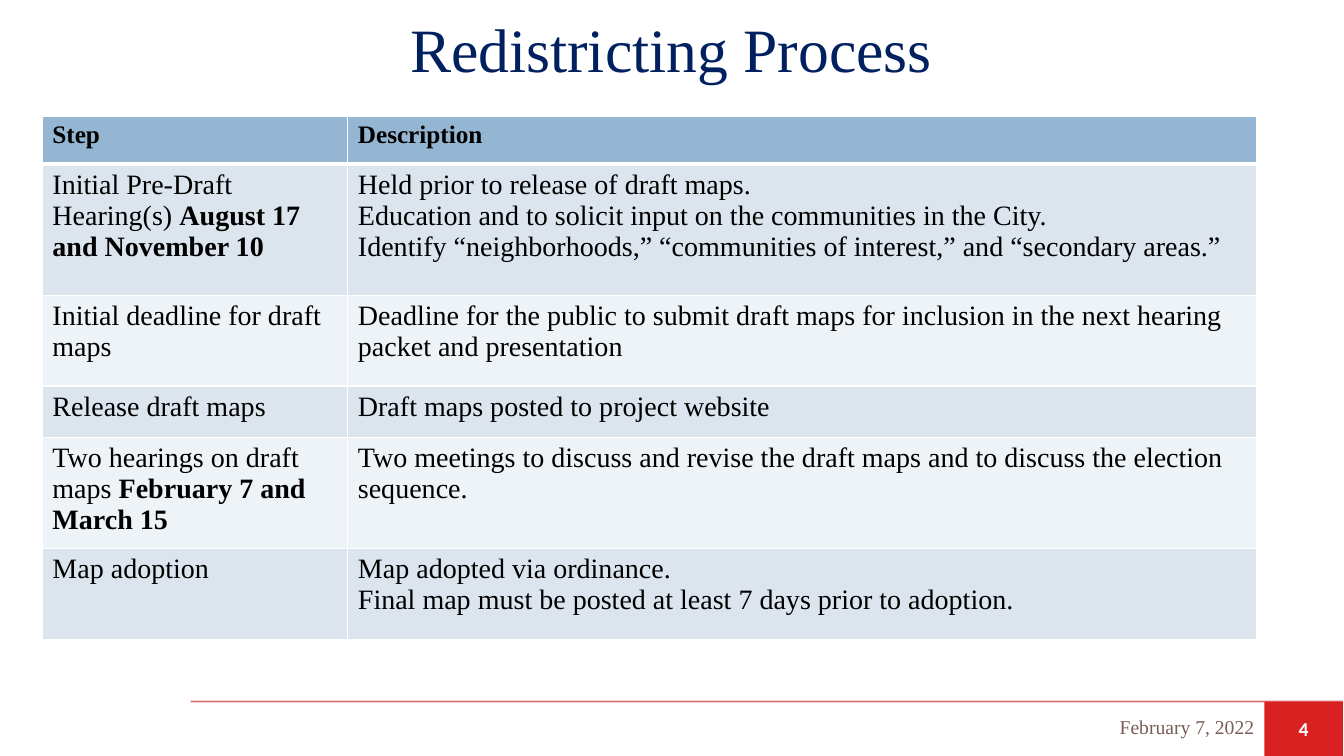
"""Build the Redistricting Process slide with its table of steps."""
from dataclasses import dataclass

import lxml.etree
import pptx
import pptx.dml.color
import pptx.enum.shapes
import pptx.enum.text
import pptx.oxml.ns
import pptx.util

TITLE = "Redistricting Process"
MEETING_DATE = "February 7, 2022"
PAGE_NUMBER = "4"
HEADINGS = ("Step", "Description")
STEPS = [
    ("Initial Pre-Draft Hearing(s) ", "August 17 and November 10",
     ["Held prior to release of draft maps.",
      "Education and to solicit input on the communities in the City.",
      "Identify “neighborhoods,” “communities of interest,” and “secondary areas.”"]),
    ("Initial deadline for draft maps", "",
     ["Deadline for the public to submit draft maps for inclusion in the next "
      "hearing packet and presentation"]),
    ("Release draft maps", "", ["Draft maps posted to project website"]),
    ("Two hearings on draft maps ", "February 7 and March 15",
     ["Two meetings to discuss and revise the draft maps and to discuss the "
      "election sequence."]),
    ("Map adoption", "",
     ["Map adopted via ordinance.",
      "Final map must be posted at least 7 days prior to adoption."]),
]

SLIDE_WIDTH, SLIDE_HEIGHT = 13.33, 7.5
TABLE_LEFT, TABLE_TOP = 0.42, 1.15
COLUMN_WIDTHS = (3.03, 9.01)
ROW_HEIGHTS = (0.48, 1.3, 0.9, 0.51, 0.9, 0.9)
FOOTER_TOP = 6.96
NUMBER_LEFT, NUMBER_WIDTH = 12.54, 0.78
DATE_WIDTH = 3.89


@dataclass(frozen=True)
class Theme:
    serif: str = "Times New Roman"
    sans: str = "Calibri"
    title: str = "002060"
    ink: str = "000000"
    white: str = "FFFFFF"
    date: str = "775F55"
    rule: str = "C80000"
    rule_opacity: int = 55
    badge: str = "D92121"
    heading_fill: str = "94B6D2"
    bands: tuple = ("DCE5EE", "EEF3F7")
    title_size: int = 44
    heading_size: int = 18
    body_size: int = 20
    footer_size: int = 14


THEME = Theme()
ALIGN = pptx.enum.text.PP_ALIGN
MIDDLE = pptx.enum.text.MSO_ANCHOR.MIDDLE


def rgb(value):
    return pptx.dml.color.RGBColor.from_string(value)


def inches(*lengths):
    return [pptx.util.Inches(length) for length in lengths]


def add_xml(parent, tag, **attributes):
    element = lxml.etree.SubElement(parent, pptx.oxml.ns.qn(tag))
    for name, value in attributes.items():
        element.set(name, str(value))
    return element


def style(run, size, color, bold=False, face=THEME.serif):
    run.font.name = face
    run.font.size = pptx.util.Pt(size)
    run.font.bold = bold
    run.font.color.rgb = rgb(color)


def write_line(frame, text, size, color, align, bold=False, face=THEME.serif):
    frame.text = text
    frame.vertical_anchor = MIDDLE
    frame.word_wrap = True
    frame.paragraphs[0].alignment = align
    style(frame.paragraphs[0].runs[0], size, color, bold, face)


def write_cell(cell, paragraphs, size, fill, bottom=1):
    properties = cell._tc.get_or_add_tcPr()
    for side, width in (("L", 1), ("R", 1), ("T", 1), ("B", bottom)):
        border = add_xml(properties, f"a:ln{side}", w=pptx.util.Pt(width))
        add_xml(add_xml(border, "a:solidFill"), "a:srgbClr", val=THEME.white)
    cell.fill.solid()
    cell.fill.fore_color.rgb = rgb(fill)
    for index, parts in enumerate(paragraphs):
        frame = cell.text_frame
        paragraph = frame.add_paragraph() if index else frame.paragraphs[0]
        for text, bold in parts:
            if text:
                run = paragraph.add_run()
                run.text = text
                style(run, size, THEME.ink, bold)


def add_footer(shapes):
    rule = shapes.add_connector(
        pptx.enum.shapes.MSO_CONNECTOR.STRAIGHT,
        *inches(1.89, FOOTER_TOP, NUMBER_LEFT + NUMBER_WIDTH, FOOTER_TOP))
    rule.line.width = pptx.util.Pt(1.25)
    rule.line.color.rgb = rgb(THEME.rule)
    shade = rule.line._ln.find(".//" + pptx.oxml.ns.qn("a:srgbClr"))
    add_xml(shade, "a:alpha", val=THEME.rule_opacity * 1000)
    add_xml(rule._element.spPr, "a:effectLst")

    badge = shapes.add_shape(
        pptx.enum.shapes.MSO_SHAPE.RECTANGLE,
        *inches(NUMBER_LEFT, FOOTER_TOP, NUMBER_WIDTH, SLIDE_HEIGHT - FOOTER_TOP))
    badge.shadow.inherit = False
    badge.fill.solid()
    badge.fill.fore_color.rgb = rgb(THEME.badge)
    badge.line.fill.background()
    write_line(badge.text_frame, PAGE_NUMBER, THEME.footer_size, THEME.white,
               ALIGN.CENTER, True, THEME.sans)

    date = shapes.add_textbox(
        *inches(NUMBER_LEFT - DATE_WIDTH, FOOTER_TOP + 0.05, DATE_WIDTH, 0.4))
    write_line(date.text_frame, MEETING_DATE, THEME.footer_size, THEME.date,
               ALIGN.RIGHT)


def add_steps(shapes):
    steps = shapes.add_table(
        len(ROW_HEIGHTS), len(COLUMN_WIDTHS),
        *inches(TABLE_LEFT, TABLE_TOP, sum(COLUMN_WIDTHS), sum(ROW_HEIGHTS))).table
    for column, width in zip(steps.columns, COLUMN_WIDTHS):
        column.width = pptx.util.Inches(width)
    for row, height in zip(steps.rows, ROW_HEIGHTS):
        row.height = pptx.util.Inches(height)
    for column, heading in enumerate(HEADINGS):
        write_cell(steps.cell(0, column), [[(heading, True)]],
                   THEME.heading_size, THEME.heading_fill, bottom=3)
    for row, (step, dates, description) in enumerate(STEPS, 1):
        band = THEME.bands[(row - 1) % 2]
        write_cell(steps.cell(row, 0), [[(step, False), (dates, True)]],
                   THEME.body_size, band)
        write_cell(steps.cell(row, 1), [[(line, False)] for line in description],
                   THEME.body_size, band)


def main():
    deck = pptx.Presentation()
    deck.slide_width, deck.slide_height = inches(SLIDE_WIDTH, SLIDE_HEIGHT)
    slide = deck.slides.add_slide(deck.slide_layouts[5])
    title = slide.shapes.title
    title.left, title.top, title.width, title.height = inches(0.01, 0, 13.3, 0.95)
    write_line(title.text_frame, TITLE, THEME.title_size, THEME.title, ALIGN.CENTER)
    add_footer(slide.shapes)
    add_steps(slide.shapes)
    deck.save("out.pptx")


if __name__ == "__main__":
    main()
